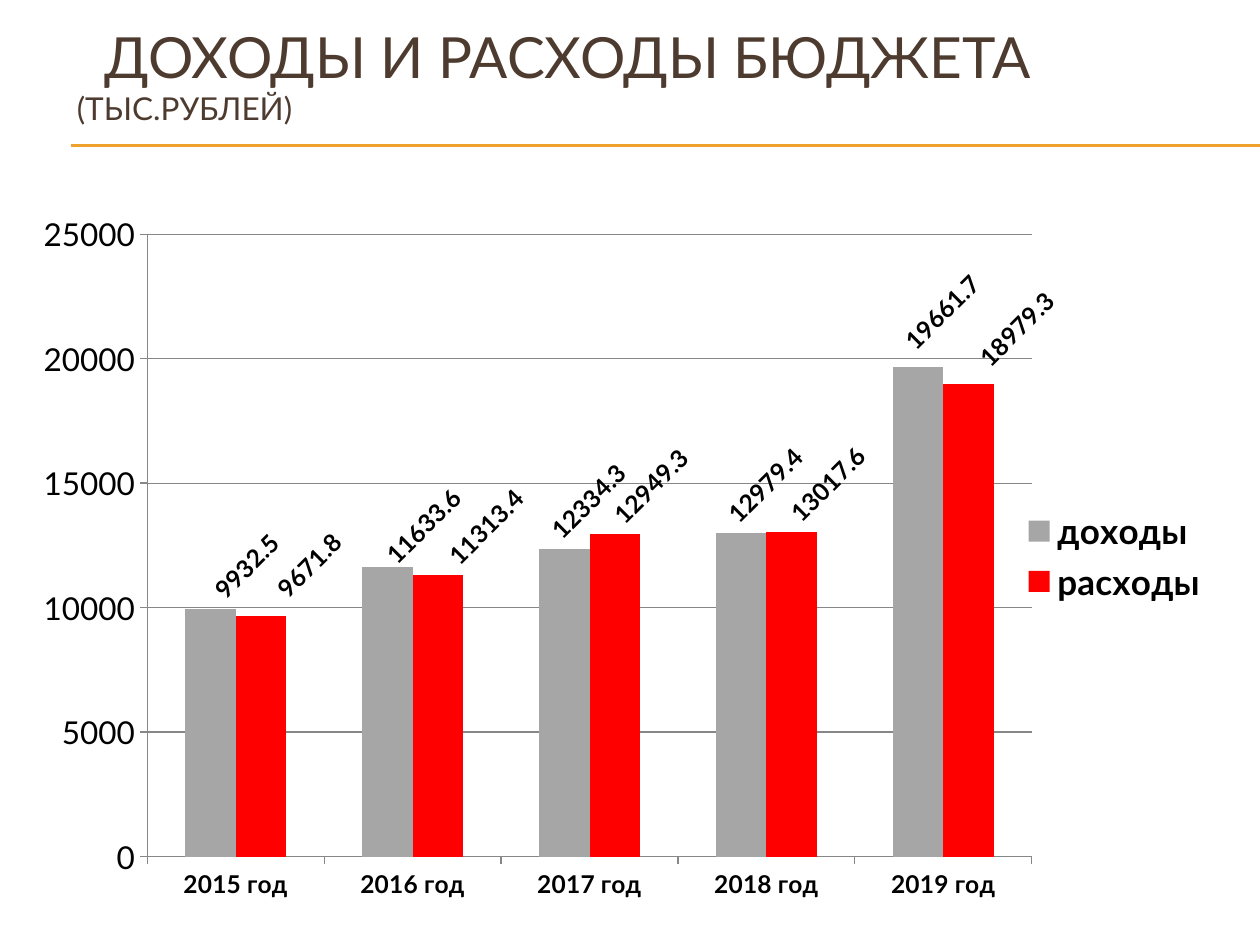
from lxml import etree
from pptx import Presentation
from pptx.chart.data import CategoryChartData
from pptx.dml.color import RGBColor
from pptx.enum.chart import XL_CHART_TYPE, XL_LABEL_POSITION, XL_LEGEND_POSITION, XL_TICK_MARK
from pptx.enum.shapes import MSO_CONNECTOR
from pptx.enum.text import MSO_ANCHOR, MSO_AUTO_SIZE, PP_ALIGN
from pptx.oxml.ns import qn
from pptx.util import Inches, Pt

COLUMNS = XL_CHART_TYPE.COLUMN_CLUSTERED
OUTSIDE_END = XL_LABEL_POSITION.OUTSIDE_END
LEGEND_RIGHT = XL_LEGEND_POSITION.RIGHT
TICK_OUT, TICK_NONE = XL_TICK_MARK.OUTSIDE, XL_TICK_MARK.NONE
STRAIGHT = MSO_CONNECTOR.STRAIGHT

FONT = "Lato"
BROWN, GOLD, BLACK, GRID_GREY = "4E3B30", "F0A22E", "000000", "878787"
LABEL_ROTATION = "-2700000"  # 45 degrees anticlockwise
YEARS = [f"{year} год" for year in range(2015, 2020)]
# name, colour, values, label shifts as fractions of the chart size
BUDGET = [
    ("доходы", "A6A6A6", [9932.5, 11633.6, 12334.3, 12979.4, 19661.7],
     [(0.03, 0), (0.03, 0.01), (0.02, 0), (0.02, 0), (0.02, -0.01)]),
    ("расходы", "FF0000", [9671.8, 11313.4, 12949.3, 13017.6, 18979.3],
     [(0.04, -0.01), (0.04, 0), (0.03, 0), (0.03, 0), (0.04, -0.01)]),
]


def rgb(hex_color):
    return RGBColor.from_string(hex_color)


def format_font(font, size, color=BLACK, bold=False):
    font.name = FONT
    font.size = Pt(size)
    font.bold = bold
    font.color.rgb = rgb(color)


def add_text(paragraph, text, **font_format):
    run = paragraph.add_run()
    run.text = text
    format_font(run.font, **font_format)


def add_title(slide):
    title = slide.shapes.title
    title.left, title.top = Inches(0.51), Inches(0.13)
    title.width, title.height = Inches(9.08), Inches(0.92)
    frame = title.text_frame
    frame.word_wrap = True
    frame.auto_size = MSO_AUTO_SIZE.NONE
    frame.vertical_anchor = MSO_ANCHOR.MIDDLE
    heading = frame.paragraphs[0]
    heading.alignment = PP_ALIGN.LEFT
    properties = heading._p.get_or_add_pPr()
    properties.set("marL", "0")
    properties.set("indent", str(Inches(0.22)))
    add_text(heading, "ДОХОДЫ И РАСХОДЫ БЮДЖЕТА", size=32.4, color=BROWN)
    heading.add_line_break()
    add_text(heading, "(ТЫС.РУБЛЕЙ)", size=18, color=BROWN)


def add_rule(slide, y):
    rule = slide.shapes.add_connector(STRAIGHT, Inches(0.56), Inches(y), Inches(10), Inches(y))
    rule.line.color.rgb = rgb(GOLD)
    rule.line.width = Pt(0.75)
    etree.SubElement(rule._element.spPr, qn("a:effectLst"))


def manual_layout(**settings):
    layout = etree.Element(qn("c:layout"))
    manual = etree.SubElement(layout, qn("c:manualLayout"))
    for tag, value in settings.items():
        etree.SubElement(manual, qn(f"c:{tag}")).set("val", str(value))
    return layout


def fix_plot_area(chart):
    plot_area = chart._chartSpace.chart.plotArea
    for layout in plot_area.findall(qn("c:layout")):
        plot_area.remove(layout)
    plot_area.insert(0, manual_layout(layoutTarget="inner", xMode="edge", yMode="edge",
                                      x=0.102, y=0.054, w=0.739, h=0.862))


def format_axes(chart):
    years, amounts = chart.category_axis, chart.value_axis
    amounts.minimum_scale, amounts.maximum_scale, amounts.major_unit = 0, 25000, 5000
    amounts.has_major_gridlines = True
    for axis, size, bold in ((years, 14, True), (amounts, 18, False)):
        axis.major_tick_mark, axis.minor_tick_mark = TICK_OUT, TICK_NONE
        format_font(axis.tick_labels.font, size, bold=bold)
    for line in (years.format.line, amounts.format.line, amounts.major_gridlines.format.line):
        line.color.rgb = rgb(GRID_GREY)
        line.width = Pt(0.75)


def add_slanted_label(point, shift):
    label = point.data_label
    format_font(label.font, 14, bold=True)
    label.position = OUTSIDE_END
    element = label._dLbl
    element.find(f"{qn('c:txPr')}/{qn('a:bodyPr')}").set("rot", LABEL_ROTATION)
    x, y = shift
    element.find(qn("c:idx")).addnext(manual_layout(x=x, y=y))


def add_budget_chart(slide):
    data = CategoryChartData()
    data.categories = YEARS
    for name, _, amounts, _ in BUDGET:
        data.add_series(name, amounts)
    chart = slide.shapes.add_chart(COLUMNS, Inches(0.2), Inches(1.55),
                                   Inches(9.5), Inches(5.73), data).chart
    format_font(chart.font, 18)
    chart.has_title = False
    chart.has_legend = True
    chart.legend.position = LEGEND_RIGHT
    chart.legend.include_in_layout = False
    format_font(chart.legend.font, 20, bold=True)
    fix_plot_area(chart)
    format_axes(chart)
    plot = chart.plots[0]
    plot.gap_width, plot.overlap = 150, 0
    plot.vary_by_categories = False
    for series, (_, color, _, shifts) in zip(plot.series, BUDGET):
        series.format.fill.solid()
        series.format.fill.fore_color.rgb = rgb(color)
        for index, shift in enumerate(shifts):
            add_slanted_label(series.points[index], shift)


def main():
    deck = Presentation()
    deck.slide_width, deck.slide_height = Inches(10), Inches(7.5)
    slide = deck.slides.add_slide(deck.slide_layouts[5])
    for y in (1.15, 1.16):
        add_rule(slide, y)
    add_title(slide)
    add_budget_chart(slide)
    deck.save("out.pptx")


if __name__ == "__main__":
    main()
